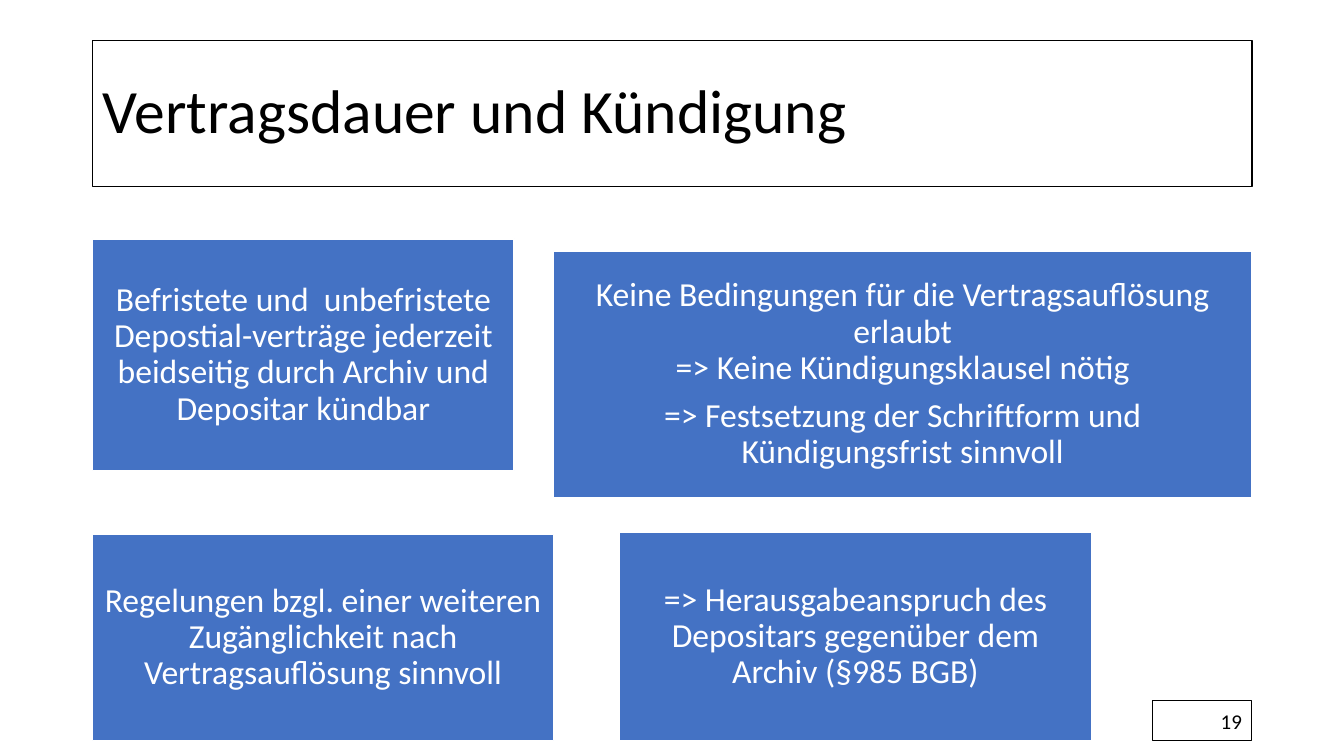
from dataclasses import dataclass

from lxml import etree
from pptx import Presentation
from pptx.dml.color import RGBColor
from pptx.enum.shapes import MSO_SHAPE
from pptx.enum.text import MSO_ANCHOR, MSO_AUTO_SIZE, PP_ALIGN
from pptx.oxml.ns import qn
from pptx.util import Inches, Pt

# Edges are percentages of the slide: left, top, right, bottom
LEFT, RIGHT, BOTTOM = 6.9, 93.15, 98
TITLE = "Vertragsdauer und Kündigung"
TITLE_EDGES = (LEFT, 5.33, RIGHT, 24.67)
PAGE_NUMBER = "19"
PAGE_EDGES = (85.74, 92.67, RIGHT, BOTTOM)
BOXES = [
    ((41.18, 33.2, RIGHT, 65.87), [
        "Keine Bedingungen für die Vertragsauflösung erlaubt\v=> Keine Kündigungsklausel nötig",
        "=> Festsetzung der Schriftform und Kündigungsfrist sinnvoll",
    ]),
    ((LEFT, 31.6, 38.25, 62.27), [
        "Befristete und  unbefristete Depostial-verträge jederzeit "
        "beidseitig durch Archiv und Depositar kündbar",
    ]),
    ((LEFT, 70.67, 41.18, BOTTOM), [
        "Regelungen bzgl. einer weiteren Zugänglichkeit nach Vertragsauflösung sinnvoll",
    ]),
    ((46.06, 70.4, 81.24, BOTTOM), [
        "=> Herausgabeanspruch des Depositars gegenüber dem Archiv (§985 BGB)",
    ]),
]


@dataclass(frozen=True)
class Theme:
    font: str = "Calibri"
    black: RGBColor = RGBColor(0, 0, 0)
    white: RGBColor = RGBColor(255, 255, 255)
    blue: RGBColor = RGBColor(0x44, 0x72, 0xC4)
    title_size: int = 44
    body_size: int = 24
    page_size: int = 15
    opacity: int = 75


THEME = Theme()


def place(shape, edges, presentation):
    left, top, right, bottom = edges
    width, height = presentation.slide_width / 100, presentation.slide_height / 100
    shape.left, shape.top = round(left * width), round(top * height)
    shape.width, shape.height = round((right - left) * width), round((bottom - top) * height)


def paint(shape, fill, line, line_width, opacity=100):
    shape.fill.solid()
    shape.fill.fore_color.rgb = fill
    shape.line.color.rgb = line
    shape.line.width = Pt(line_width)
    if opacity < 100:
        color = shape.fill._xPr.find(qn("a:solidFill"))[0]
        etree.SubElement(color, qn("a:alpha"), val=str(opacity * 1000))


def write(shape, texts, size, color, alignment, line_spacing=1.0, gap=0):
    frame = shape.text_frame
    frame.word_wrap = True
    frame.auto_size = MSO_AUTO_SIZE.NONE
    frame.vertical_anchor = MSO_ANCHOR.MIDDLE
    for index, text in enumerate(texts):
        paragraph = frame.add_paragraph() if index else frame.paragraphs[0]
        paragraph.text = text
        paragraph.alignment = alignment
        paragraph.line_spacing = line_spacing
        paragraph.space_before = Pt(0)
        paragraph.space_after = Pt(gap)
        paragraph.font.name = THEME.font
        paragraph.font.size = Pt(size)
        paragraph.font.color.rgb = color


def add_rectangle(slide, edges, presentation):
    shape = slide.shapes.add_shape(MSO_SHAPE.RECTANGLE, 0, 0, 0, 0)
    shape.shadow.inherit = False
    place(shape, edges, presentation)
    return shape


def main():
    presentation = Presentation()
    presentation.slide_width, presentation.slide_height = Inches(13.33), Inches(7.5)
    slide = presentation.slides.add_slide(presentation.slide_layouts[5])

    title = slide.shapes.title
    place(title, TITLE_EDGES, presentation)
    paint(title, THEME.white, THEME.black, 1, THEME.opacity)
    write(title, [TITLE], THEME.title_size, THEME.black, PP_ALIGN.LEFT, 0.9)

    page = add_rectangle(slide, PAGE_EDGES, presentation)
    paint(page, THEME.white, THEME.black, 0.75, THEME.opacity)
    write(page, [PAGE_NUMBER], THEME.page_size, THEME.black, PP_ALIGN.RIGHT)

    for edges, texts in BOXES:
        box = add_rectangle(slide, edges, presentation)
        paint(box, THEME.blue, THEME.white, 1)
        write(box, texts, THEME.body_size, THEME.white, PP_ALIGN.CENTER, 0.9,
              gap=0.35 * THEME.body_size)
        frame = box.text_frame
        frame.margin_left = frame.margin_right = Inches(0.1)
        frame.margin_top = frame.margin_bottom = Inches(0.1)

    presentation.save("out.pptx")


if __name__ == "__main__":
    main()
